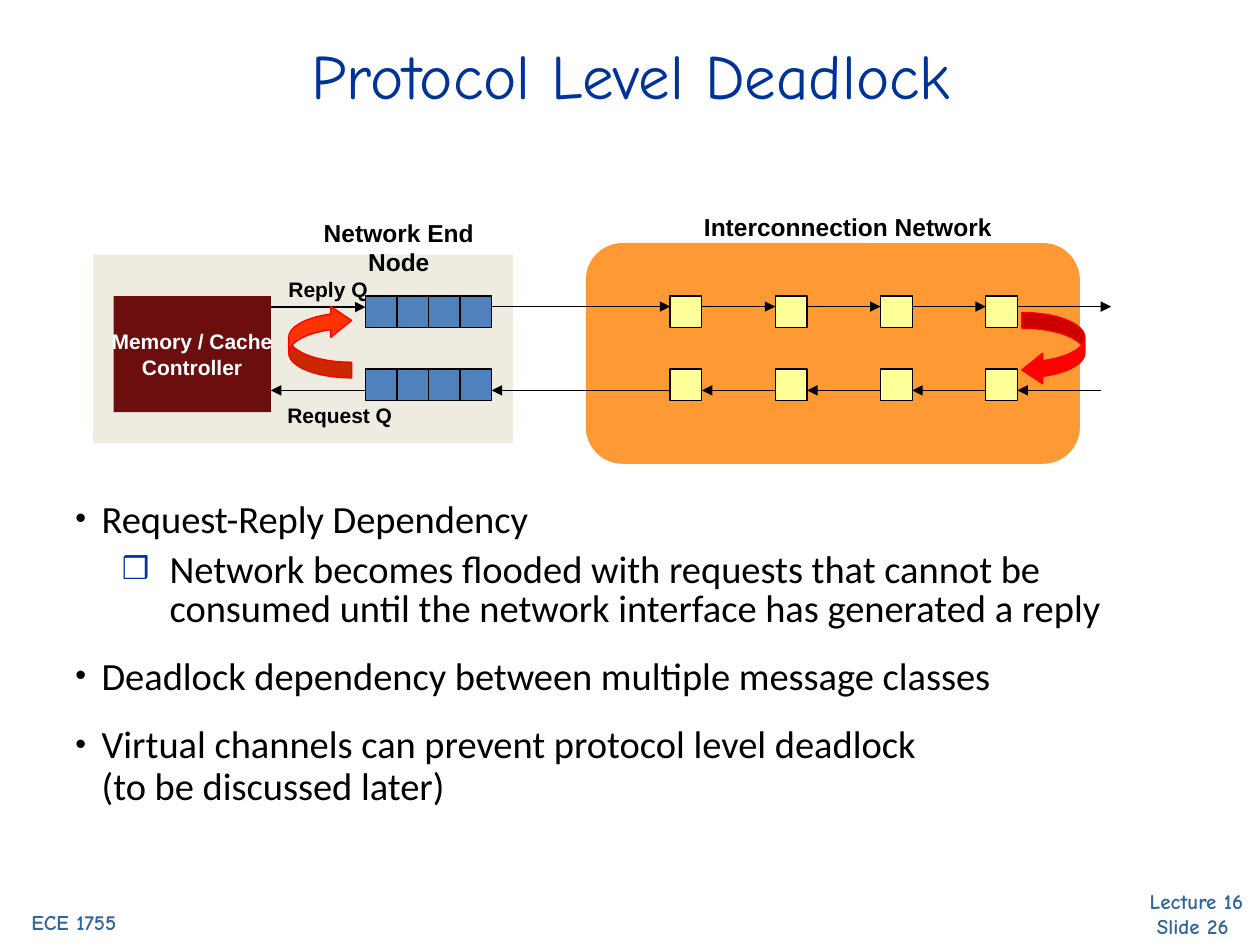
from dataclasses import dataclass

from lxml.etree import SubElement
from pptx import Presentation
from pptx.dml.color import RGBColor
from pptx.enum.shapes import MSO_CONNECTOR as Conn, MSO_SHAPE as Shape
from pptx.enum.text import MSO_ANCHOR as Anchor, PP_ALIGN as Align
from pptx.oxml.ns import qn
from pptx.util import Cm, Pt


@dataclass(frozen=True)
class Theme:
    """Colours, fonts and type sizes of the slide."""
    black: str = "000000"
    white: str = "FFFFFF"
    navy: str = "003399"
    footer: str = "336699"
    node: str = "EEECE1"
    controller: str = "6C0E0E"
    queue: str = "4F81BD"
    network: str = "FF9933"
    router: str = "FFFF99"
    reply_loop: str = "FF3300"
    red: str = "FF0000"
    display: str = "Comic Neue"
    body: str = "Calibri"
    label: str = "Arial"
    title_size: int = 36
    body_size: int = 22
    head_size: int = 14
    small_size: int = 12
    line: float = 0.75


@dataclass(frozen=True)
class Box:
    """A rectangle in centimetres."""
    x: float
    y: float
    w: float
    h: float

    def at(self, dx, dy, w, h):
        """Return a box offset from this one's top left corner."""
        return Box(self.x + dx, self.y + dy, w, h)

    def lengths(self):
        """Return the four lengths that python-pptx expects."""
        return Cm(self.x), Cm(self.y), Cm(self.w), Cm(self.h)


T = Theme()


def write(p, text, font, size, color, bold=False):
    """Add text to a paragraph, with a line break at each newline."""
    for i, part in enumerate(text.split("\n")):
        if i:
            p.add_line_break()
        r = p.add_run()
        r.text = part
        r.font.name, r.font.size, r.font.bold = font, Pt(size), bold
        r.font.color.rgb = RGBColor.from_string(color)


def add_text(slide, box, text, font, size, color, bold=True, wrap=False):
    """Add a centred text box."""
    tf = slide.shapes.add_textbox(*box.lengths()).text_frame
    tf.word_wrap = wrap
    p = tf.paragraphs[0]
    p.alignment = Align.CENTER
    write(p, text, font, size, color, bold)
    return tf


def add_block(slide, box, fill, line=None, kind=Shape.RECTANGLE):
    """Add a filled shape with an optional outline."""
    sp = slide.shapes.add_shape(kind, *box.lengths())
    sp.shadow.inherit = False
    sp.fill.solid()
    sp.fill.fore_color.rgb = RGBColor.from_string(fill)
    if line:
        sp.line.color.rgb = RGBColor.from_string(line)
        sp.line.width = Pt(T.line)
    else:
        sp.line.fill.background()
    return sp


def add_line(slide, x1, y1, x2, y2, arrow=False):
    """Add a thin black line, optionally with an arrowhead at its end."""
    c = slide.shapes.add_connector(Conn.STRAIGHT, Cm(x1), Cm(y1), Cm(x2), Cm(y2))
    c.line.color.rgb = RGBColor.from_string(T.black)
    c.line.width = Pt(T.line)
    if arrow:
        SubElement(c.line._get_or_add_ln(), qn("a:tailEnd"), type="triangle")
    SubElement(c._element.spPr, qn("a:effectLst"))


def add_loop(slide, box, fill, rotation=0):
    """Add a curved arrow that links the two message rows."""
    sp = add_block(slide, box, fill, T.red, Shape.CURVED_RIGHT_ARROW)
    for i, value in enumerate((0.25, 0.49, 0.33)):
        sp.adjustments[i] = value
    sp.rotation = rotation
    sp._element.spPr.find(qn("a:xfrm")).set("flipV", "1")


def add_queue(slide, box, slots=4):
    """Add a queue divided into equal slots."""
    add_block(slide, box, T.queue, T.black)
    for i in range(1, slots):
        x = box.x + i * box.w / slots
        add_line(slide, x, box.y, x, box.y + box.h)


def add_end_node(slide, box):
    """Add the end node with its controller and two queues."""
    add_block(slide, box, T.node)
    add_text(slide, box.at(3.71, -0.86, 4.9, 0.84), "Network End Node",
             T.label, T.head_size, T.black)
    for dy in (0.84, 2.31):
        add_queue(slide, box.at(5.49, dy, 2.54, 0.64))
    for place, text in ((box.at(3.66, 2.87, 2.62, 0.76), "Request Q"),
                        (box.at(3.68, 0.33, 2.11, 0.76), "Reply Q")):
        add_text(slide, place, text, T.label, T.small_size, T.black)
    controller = add_block(slide, box.at(0.41, 0.84, 3.17, 2.34), T.controller)
    tf = controller.text_frame
    tf.word_wrap, tf.vertical_anchor = False, Anchor.MIDDLE
    for i, text in enumerate(("Memory / Cache", "Controller")):
        p = tf.add_paragraph() if i else tf.paragraphs[0]
        p.alignment = Align.CENTER
        write(p, text, T.label, T.small_size, T.white, True)
    left, right = box.x + 3.58, box.x + 5.49
    add_line(slide, left, box.y + 1.06, right, box.y + 1.06, True)
    add_line(slide, right, box.y + 2.74, left, box.y + 2.74, True)
    add_loop(slide, box.at(3.94, 1.02, 1.27, 1.47), T.reply_loop)


def add_network(slide, box, routers=4, pitch=2.12, size=0.64):
    """Add the network with a reply row going right and a request row going left."""
    add_block(slide, box, T.network, kind=Shape.ROUNDED_RECTANGLE)
    add_text(slide, box.at(2.11, -0.76, 6.35, 0.84), "Interconnection Network",
             T.label, T.head_size, T.black, wrap=True)
    lefts = [1.7 + i * pitch for i in range(routers)]
    rights = [x + size for x in lefts]
    for row, wire, end, is_reply in ((1.07, 1.28, 10.59, True),
                                     (2.54, 2.97, 10.39, False)):
        y = box.y + wire
        for start, stop in zip([-1.9] + rights, lefts + [end]):
            x1, x2 = (start, stop) if is_reply else (stop, start)
            add_line(slide, box.x + x1, y, box.x + x2, y, True)
        for x in lefts:
            add_block(slide, box.at(x, row, size, size), T.router, T.black)
    add_loop(slide, box.at(8.79, 1.4, 1.27, 1.47), T.red, 180)


def add_bullets(slide, box, items):
    """Add a two-level bullet list from (level, text) pairs."""
    styles = ((0.53, 0.53, 24, 15, "•", T.black), (1.9, 0.96, 22, 7, "❒", T.navy))
    tf = slide.shapes.add_textbox(*box.lengths()).text_frame
    tf.word_wrap = True
    for i, (level, text) in enumerate(items):
        margin, hang, spacing, before, mark, color = styles[level]
        p = tf.add_paragraph() if i else tf.paragraphs[0]
        p.level = level
        p.line_spacing, p.space_before = Pt(spacing), Pt(before)
        pPr = p._p.get_or_add_pPr()
        pPr.set("marL", str(Cm(margin)))
        pPr.set("indent", str(-Cm(hang)))
        SubElement(SubElement(pPr, qn("a:buClr")), qn("a:srgbClr"), val=color)
        SubElement(pPr, qn("a:buSzPct"), val="80000")
        SubElement(pPr, qn("a:buFont"), typeface=T.label)
        SubElement(pPr, qn("a:buChar"), char=mark)
        write(p, text, T.body, T.body_size, T.black)


def build_slide(slide, box):
    """Place the title, diagram, bullets and footers in the slide's box."""
    title = add_text(slide, box.at(0.97, 0.64, 23.5, 1.7), "Protocol Level Deadlock",
                     T.display, T.title_size, T.navy, False, True)
    title.vertical_anchor = Anchor.MIDDLE
    add_end_node(slide, box.at(1.88, 5.13, 8.46, 3.81))
    add_network(slide, box.at(11.81, 4.9, 9.96, 4.45))
    add_bullets(slide, box.at(1.27, 9.93, 22.86, 7.72), (
        (0, "Request-Reply Dependency"),
        (1, "Network becomes flooded with requests that cannot be consumed "
            "until the network interface has generated a reply"),
        (0, "Deadlock dependency between multiple message classes"),
        (0, "Virtual channels can prevent protocol level deadlock \n"
            "(to be discussed later)")))
    for place, text in ((box.at(22.43, 17.78, 3.38, 1.27), "Lecture 16\nSlide 26 "),
                        (box.at(-0.2, 18.21, 3.38, 0.76), "ECE 1755")):
        add_text(slide, place, text, T.display, T.small_size, T.footer, wrap=True)


def main():
    """Build and save the one-slide presentation."""
    prs = Presentation()
    prs.slide_width, prs.slide_height = Cm(25.4), Cm(19.05)
    build_slide(prs.slides.add_slide(prs.slide_layouts[6]), Box(0, 0, 25.4, 19.05))
    prs.save("out.pptx")


if __name__ == "__main__":
    main()
